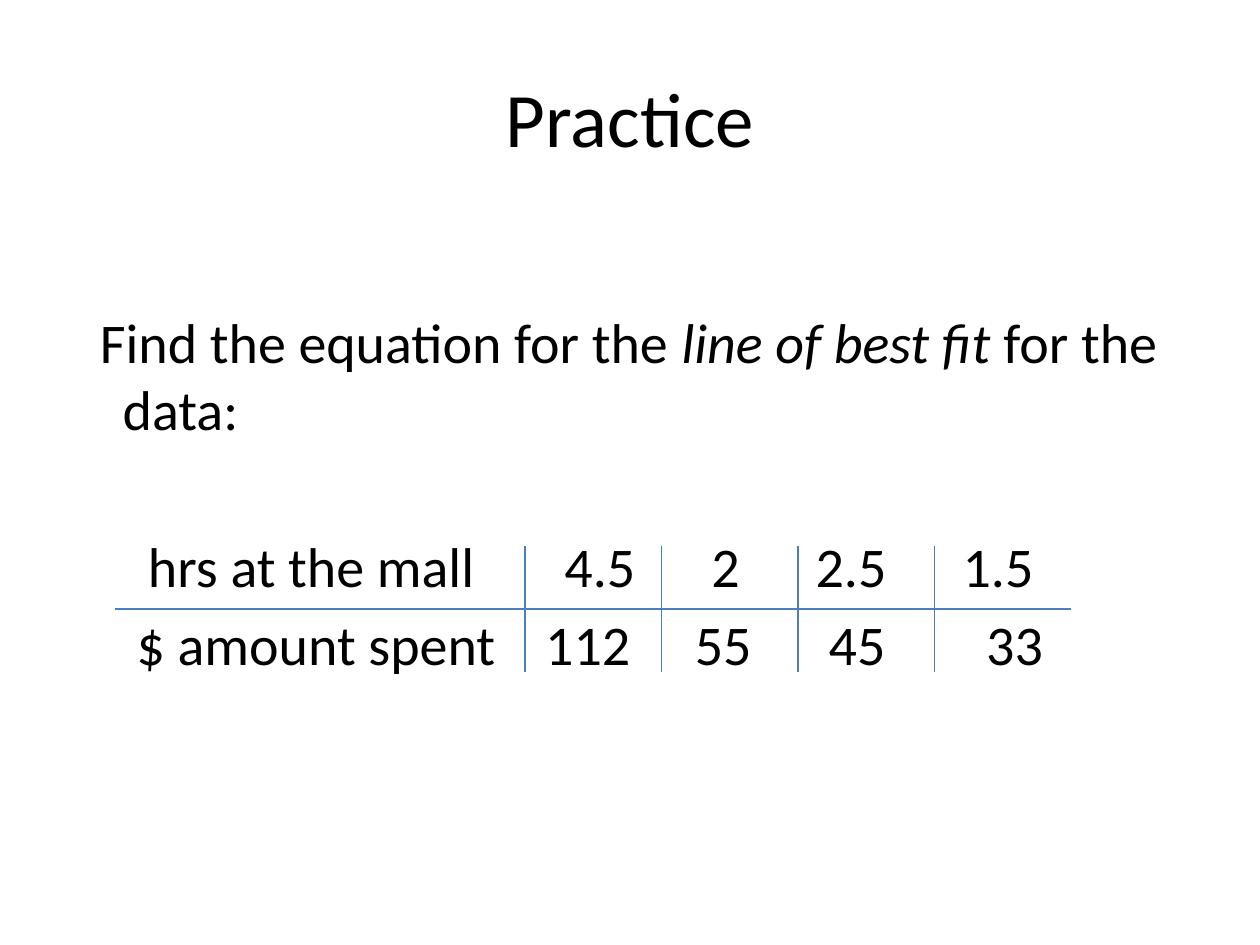
"""Build a practice slide on the line of best fit."""
from lxml import etree
from pptx import Presentation
from pptx.dml.color import RGBColor
from pptx.enum.shapes import MSO_CONNECTOR
from pptx.enum.text import MSO_ANCHOR, PP_ALIGN
from pptx.oxml.ns import qn
from pptx.util import Pt

STRAIGHT = MSO_CONNECTOR.STRAIGHT
TOP, MIDDLE = MSO_ANCHOR.TOP, MSO_ANCHOR.MIDDLE
LEFT, CENTER = PP_ALIGN.LEFT, PP_ALIGN.CENTER


def color(value):
    """Turn a hex string into a colour."""
    return RGBColor.from_string(value)


def add_text(p, text, size=32, italic=False, fill="000000"):
    """Add one formatted run to a paragraph."""
    r = p.add_run()
    r.text = text
    r.font.name = "Calibri"
    r.font.size = Pt(size)
    r.font.italic = italic
    r.font.color.rgb = color(fill)


prs = Presentation()
prs.slide_width, prs.slide_height = Pt(720), Pt(540)
s = prs.slides.add_slide(prs.slide_layouts[6])

frames = []
for top, height, anchor, inset in [(21.6, 90, MIDDLE, 3.6), (126, 356.4, TOP, 49.8)]:
    sp = s.shapes.add_textbox(Pt(36), Pt(top), Pt(648), Pt(height))
    tf = sp.text_frame
    tf.word_wrap = True
    tf.vertical_anchor = anchor
    tf.margin_top = Pt(inset)
    frames.append(tf)
title, body = frames

p = title.paragraphs[0]
p.alignment = CENTER
add_text(p, "Practice", size=44)

p = body.paragraphs[0]
p.alignment = LEFT
pPr = p._p.get_or_add_pPr()
pPr.set("marL", str(Pt(27)))
pPr.set("indent", str(Pt(-13)))
add_text(p, "Find the equation for the ")
add_text(p, "line of best fit ", italic=True)
add_text(p, "for the data:")

rows = [
    (51, ["hrs at the mall", "4.5", "2", "2.5", "1.5"], [41.5, 279.5, 363.5, 423, 507]),
    (6, ["$ amount spent", "112", "55", "45", "33"], [35, 268.5, 354, 430.5, 520.5]),
]
for gap, cells, stops in rows:
    p = body.add_paragraph()
    p.alignment = LEFT
    p.space_before = Pt(gap)
    tabs = etree.SubElement(p._p.get_or_add_pPr(), qn("a:tabLst"))
    for stop in stops:
        etree.SubElement(tabs, qn("a:tab"), pos=str(Pt(stop)), algn="l")
    add_text(p, "".join("\t" + cell for cell in cells))

rules = [(66, 348, 612, 348)]
rules += [(300 + 78 * i, 312, 300 + 78 * i, 384) for i in range(4)]
for ends in rules:
    line = s.shapes.add_connector(STRAIGHT, *map(Pt, ends))
    line.line.color.rgb = color("4B7EBC")
    line.line.width = Pt(0.75)
    etree.SubElement(line._element.spPr, qn("a:effectLst"))

prs.save("out.pptx")
